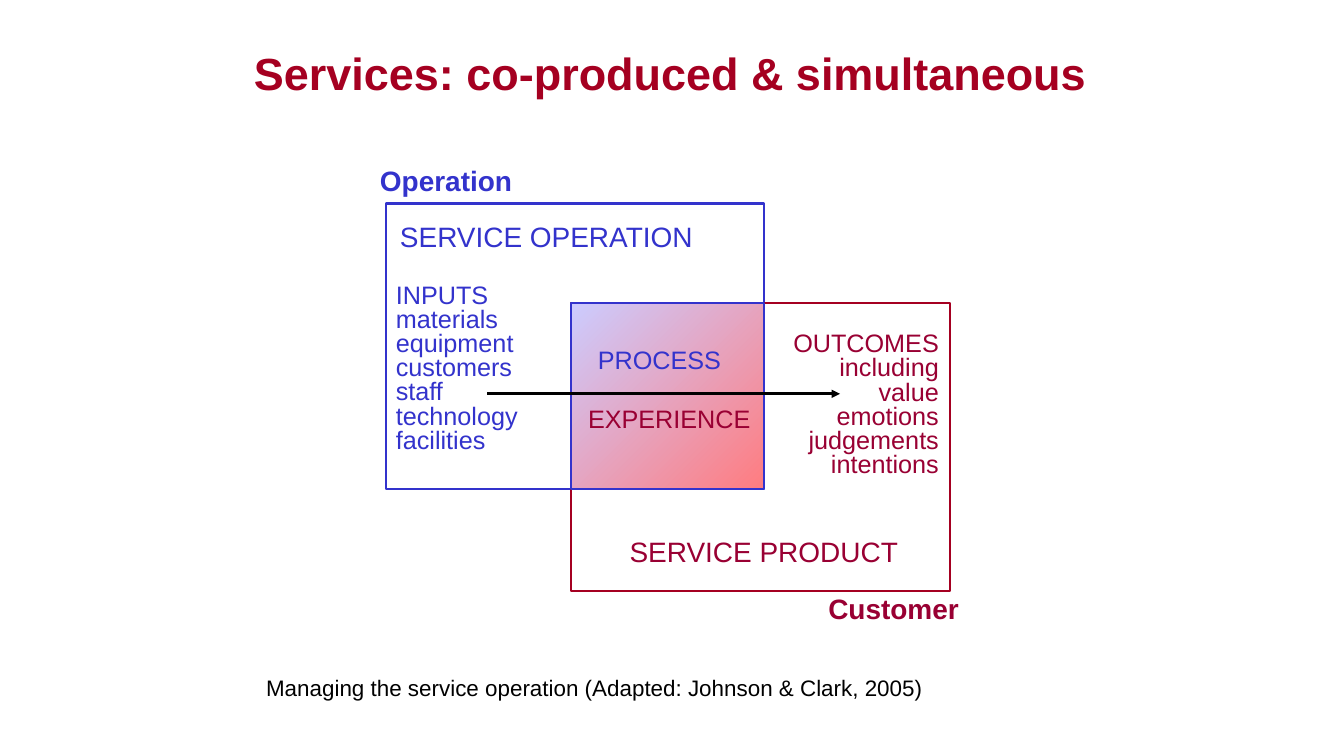
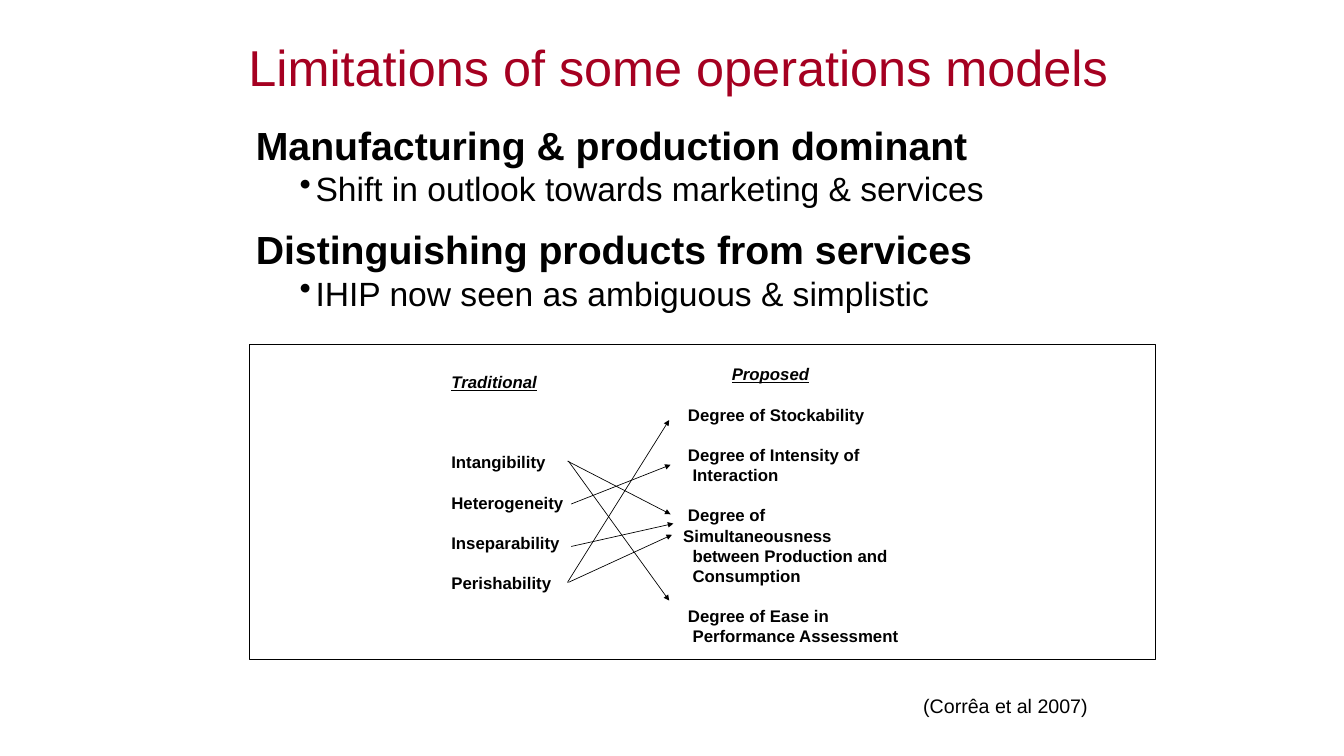
import lxml.etree
import pptx
import pptx.dml.color
import pptx.enum.shapes
import pptx.enum.text
import pptx.oxml.ns
import pptx.util

Pt = pptx.util.Pt
rgb = pptx.dml.color.RGBColor.from_string
qn = pptx.oxml.ns.qn
ALIGN = pptx.enum.text.PP_ALIGN
RECTANGLE = pptx.enum.shapes.MSO_SHAPE.RECTANGLE


class Theme:
    font = "Arial"
    ink = rgb("000000")
    title = rgb("A50021")
    operation = rgb("3333CC")
    customer = rgb("990033")
    blend = (rgb("CCCCFF"), rgb("FF7C80"))
    bold_title, plain_title = 48.2, 54
    heading, bullet = 42, 36
    label, listing = 30, 27
    caption, citation, concept = 24, 21, 18


def add_text(slide, box, lines, size, colour, bold=False, align=ALIGN.LEFT, spacing=1.0):
    frame = slide.shapes.add_textbox(*map(Pt, box)).text_frame
    frame.word_wrap = True
    frame.text = "\n".join(lines)
    for paragraph in frame.paragraphs:
        paragraph.alignment = align
        paragraph.line_spacing = spacing
        paragraph.font.name = Theme.font
        paragraph.font.size = Pt(size)
        paragraph.font.bold = bold
        paragraph.font.color.rgb = colour
    return frame


def add_line(slide, start, end, width, arrow=True):
    line = slide.shapes.add_connector(
        pptx.enum.shapes.MSO_CONNECTOR.STRAIGHT, *map(Pt, start + end))
    line.line.color.rgb = Theme.ink
    line.line.width = Pt(width)
    if arrow:
        lxml.etree.SubElement(line.line._get_or_add_ln(), qn("a:tailEnd"), type="triangle")
    lxml.etree.SubElement(line._element.spPr, qn("a:effectLst"))


deck = pptx.Presentation()
deck.slide_width, deck.slide_height = Pt(1440), Pt(810)
services, limitations = [deck.slides.add_slide(deck.slide_layouts[6]) for _ in range(2)]

for slide, box, colour, width, blended in [
    (services, (414, 218, 405, 306), Theme.operation, 2.25, False),
    (services, (612, 325, 406, 308), Theme.title, 2.25, False),
    (services, (612, 325, 207, 199), Theme.operation, 2.25, True),
    (limitations, (267, 369.5, 971, 337.5), Theme.ink, 0.75, False),
]:
    area = slide.shapes.add_shape(RECTANGLE, *map(Pt, box))
    area.shadow.inherit = False
    area.line.color.rgb = colour
    area.line.width = Pt(width)
    if blended:
        area.fill.gradient()
        area.fill.gradient_angle = 315
        for stop, position, shade in zip(area.fill.gradient_stops, (0, 1), Theme.blend):
            stop.position = position
            stop.color.rgb = shade
    else:
        area.fill.background()

title = add_text(services, (224, 31, 989, 93.5), ["Services: co-produced & simultaneous"],
                 Theme.bold_title, Theme.title, True, ALIGN.CENTER)
title.vertical_anchor = pptx.enum.text.MSO_ANCHOR.MIDDLE

inputs = ["INPUTS", "materials", "equipment", "customers", "staff", "technology", "facilities"]
outcomes = ["OUTCOMES", "including", "value", "emotions", "judgements", "intentions"]
for box, lines, size, colour, bold, align, spacing in [
    ((400, 171.5, 378, 44), ["Operation"], Theme.label, Theme.operation, True, ALIGN.LEFT, 1.0),
    ((338, 236, 495, 73), ["SERVICE OPERATION"], Theme.label, Theme.operation, False, ALIGN.CENTER, 0.9),
    ((417, 301.5, 198, 217), inputs, Theme.listing, Theme.operation, False, ALIGN.LEFT, 0.8),
    ((607.5, 373, 198, 32), ["PROCESS"], Theme.listing, Theme.operation, False, ALIGN.CENTER, 0.75),
    ((582, 436.5, 270, 32), ["EXPERIENCE"], Theme.listing, Theme.customer, False, ALIGN.CENTER, 0.75),
    ((783.5, 353.5, 229.5, 166), outcomes, Theme.listing, Theme.customer, False, ALIGN.RIGHT, 0.8),
    ((602.5, 569, 432, 44), ["SERVICE PRODUCT"], Theme.label, Theme.customer, False, ALIGN.CENTER, 1.0),
    ((656.5, 630.5, 378, 44), ["Customer"], Theme.label, Theme.customer, True, ALIGN.RIGHT, 1.0),
    ((278, 718.5, 961, 65.5), ["Managing the service operation (Adapted: Johnson & Clark, 2005)"],
     Theme.caption, Theme.ink, False, ALIGN.LEFT, 1.0),
]:
    add_text(services, box, lines, size, colour, bold, align, spacing)

add_line(services, (522, 422), (864, 422), 3, arrow=False)
add_line(services, (558, 422), (900, 422), 3)

add_text(limitations, (259, 35, 971, 142), ["Limitations of some operations models"],
         Theme.plain_title, Theme.title)

arguments = add_text(limitations, (267, 126.5, 963, 302), [
    "Manufacturing & production dominant",
    "Shift in outlook towards marketing & services",
    "Distinguishing products from services",
    "IHIP now seen as ambiguous & simplistic",
], Theme.heading, Theme.ink, True).paragraphs
arguments[2].space_before = Pt(18)
for point in arguments[1::2]:
    point.level = 1
    properties = point._p.get_or_add_pPr()
    properties.set("marL", str(Pt(64)))
    properties.set("indent", str(Pt(-17)))
    mark = lxml.etree.Element(qn("a:buChar"), char="•")
    properties.find(qn("a:defRPr")).addprevious(mark)
    point.font.size = Pt(Theme.bullet)
    point.font.bold = False

traditional = [("Traditional", 5, 0), ("Intangibility", 5, 3), ("Heterogeneity", 5, 1),
               ("Inseparability", 5, 1), ("Perishability", 5, 1)]
proposed = [("Proposed", 52, 0), ("Degree of Stockability", 5, 1),
            ("Degree of Intensity of", 5, 1), ("Interaction", 10, 0),
            ("Degree of Simultaneousness", 5, 1), ("between Production and", 10, 0),
            ("Consumption", 10, 0), ("Degree of Ease in", 5, 1),
            ("Performance Assessment", 10, 0)]
line_height = 21.6
for box, concepts in [((471.5, 394.5, 148.5, 291), traditional),
                      ((725, 386.5, 252, 356.5), proposed)]:
    column = add_text(limitations, box, [concept[0] for concept in concepts],
                      Theme.concept, Theme.ink, True).paragraphs
    for paragraph, (_, indent, gap_lines) in zip(column, concepts):
        paragraph._p.get_or_add_pPr().set("indent", str(Pt(indent)))
        if gap_lines:
            paragraph.space_before = Pt(gap_lines * line_height)
    column[0].font.italic = True
    column[0].font.underline = True

for start, end in [
    ((608, 494), (718.5, 551)),
    ((609, 494), (717, 643.5)),
    ((612, 540), (718.5, 498)),
    ((612, 585.5), (721.5, 561)),
    ((609, 624), (720, 573)),
    ((608, 624), (717, 450)),
]:
    add_line(limitations, start, end, 0.75)

add_text(limitations, (873.5, 739.5, 299, 33), ["(Corrêa et al 2007)"],
         Theme.citation, Theme.ink, align=ALIGN.RIGHT)

deck.save("out.pptx")
